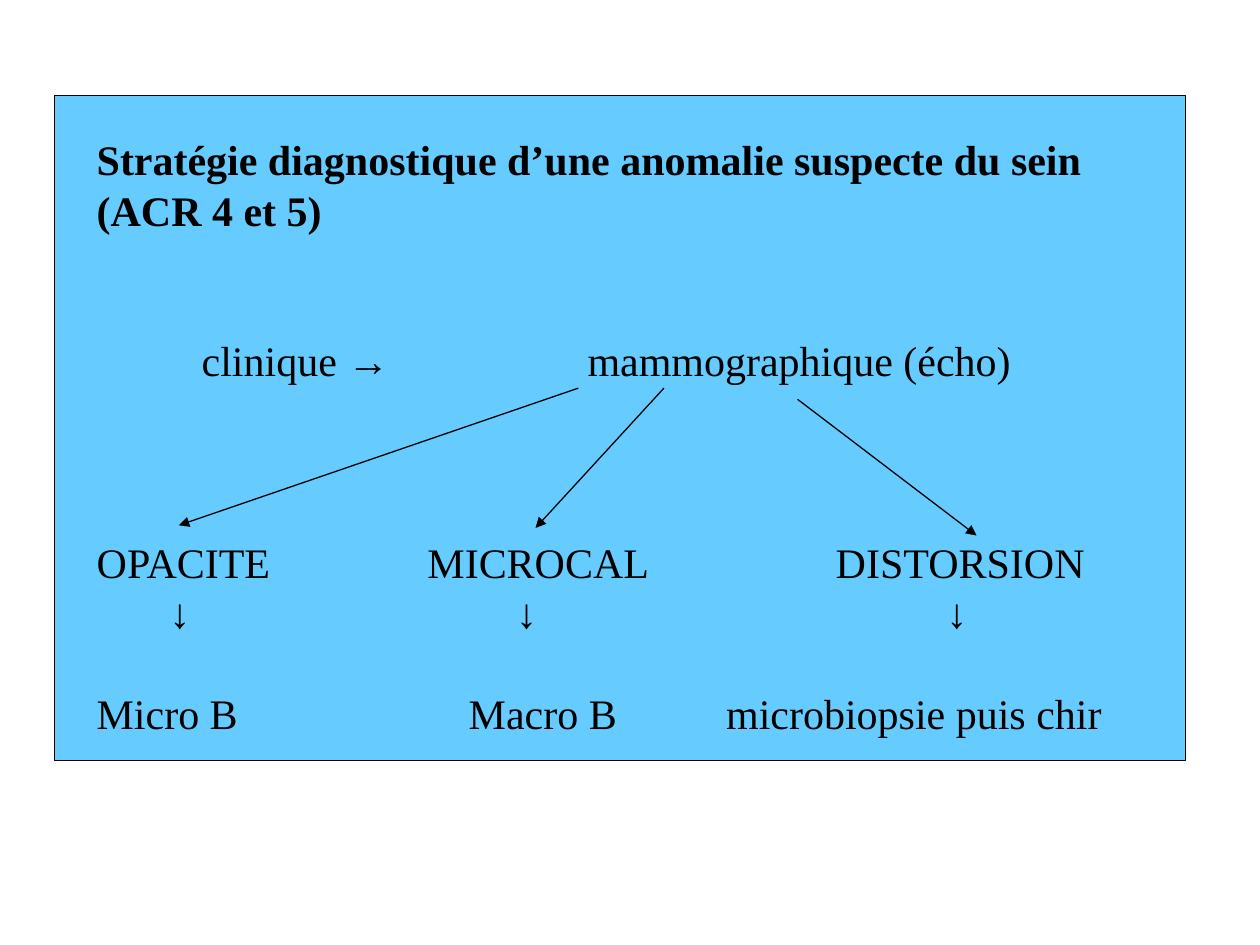
from pptx import Presentation
from pptx.dml.color import RGBColor
from pptx.enum.shapes import MSO_CONNECTOR, MSO_SHAPE
from pptx.oxml.ns import qn
from pptx.util import Pt
from lxml.etree import SubElement

INK = {"black": "000000", "sky": "66CCFF"}
LINE = 28.75  # height of one line of text


def color(name):
    return RGBColor.from_string(INK[name])


def write(para, text, size=24, bold=False, before=0, tabs=()):
    """Fill a paragraph; tabs holds (position, alignment) pairs."""
    if tabs:
        stops = SubElement(para._p.get_or_add_pPr(), qn("a:tabLst"))
        for pos, algn in tabs:
            SubElement(stops, qn("a:tab"), pos=str(Pt(pos)), algn=algn)
    para.line_spacing = Pt(LINE)
    para.space_before = Pt(before)
    run = para.add_run()
    run.text = text
    run.font.name = "Times New Roman"
    run.font.size = Pt(size)
    run.font.bold = bold
    run.font.color.rgb = color("black")


deck = Presentation()
deck.slide_width, deck.slide_height = Pt(720), Pt(540)
slide = deck.slides.add_slide(deck.slide_layouts[6])
shapes = slide.shapes

# Blue panel
panel = shapes.add_shape(MSO_SHAPE.RECTANGLE, Pt(31), Pt(54.7), Pt(646.6), Pt(380))
panel.shadow.inherit = False
panel.fill.solid()
panel.fill.fore_color.rgb = color("sky")
panel.line.color.rgb = color("black")
panel.line.width = Pt(0.75)

# Title and decision tree, with columns set by tab stops
box = shapes.add_textbox(Pt(48.2), Pt(43.2), Pt(595.4), Pt(385.2))
frame = box.text_frame
frame.word_wrap = True
frame.margin_top = Pt(33.25)
rows = [
    ("Stratégie diagnostique d’une anomalie suspecte du sein (ACR 4 et 5)", 0, ()),
    ("\tclinique →\tmammographique (écho)", 2, ((60, "l"), (280.5, "l"))),
    ("OPACITE\tMICROCAL\tDISTORSION", 3, ((189, "l"), (422.3, "l"))),
    ("\t↓\t↓\t↓", 0, ((47.5, "ctr"), (245.7, "ctr"), (491.5, "ctr"))),
    ("Micro B\tMacro B\tmicrobiopsie puis chir", 1, ((212.6, "l"), (359.7, "l"))),
]
for i, (text, gap, tabs) in enumerate(rows):
    para = frame.paragraphs[0] if i == 0 else frame.add_paragraph()
    write(para, text, bold=i == 0, before=gap * LINE, tabs=tabs)

# Arrows from the mammogram to the three findings
for ends in [
    (330.5, 221.8, 102.2, 300.2),
    (379.4, 221.8, 306, 301.7),
    (455.8, 228.2, 558, 306),
]:
    arrow = shapes.add_connector(MSO_CONNECTOR.STRAIGHT, *map(Pt, ends))
    arrow.line.color.rgb = color("black")
    arrow.line.width = Pt(0.75)
    SubElement(arrow.line._get_or_add_ln(), qn("a:tailEnd"), type="triangle")
    SubElement(arrow._element.spPr, qn("a:effectLst"))

deck.save("out.pptx")
